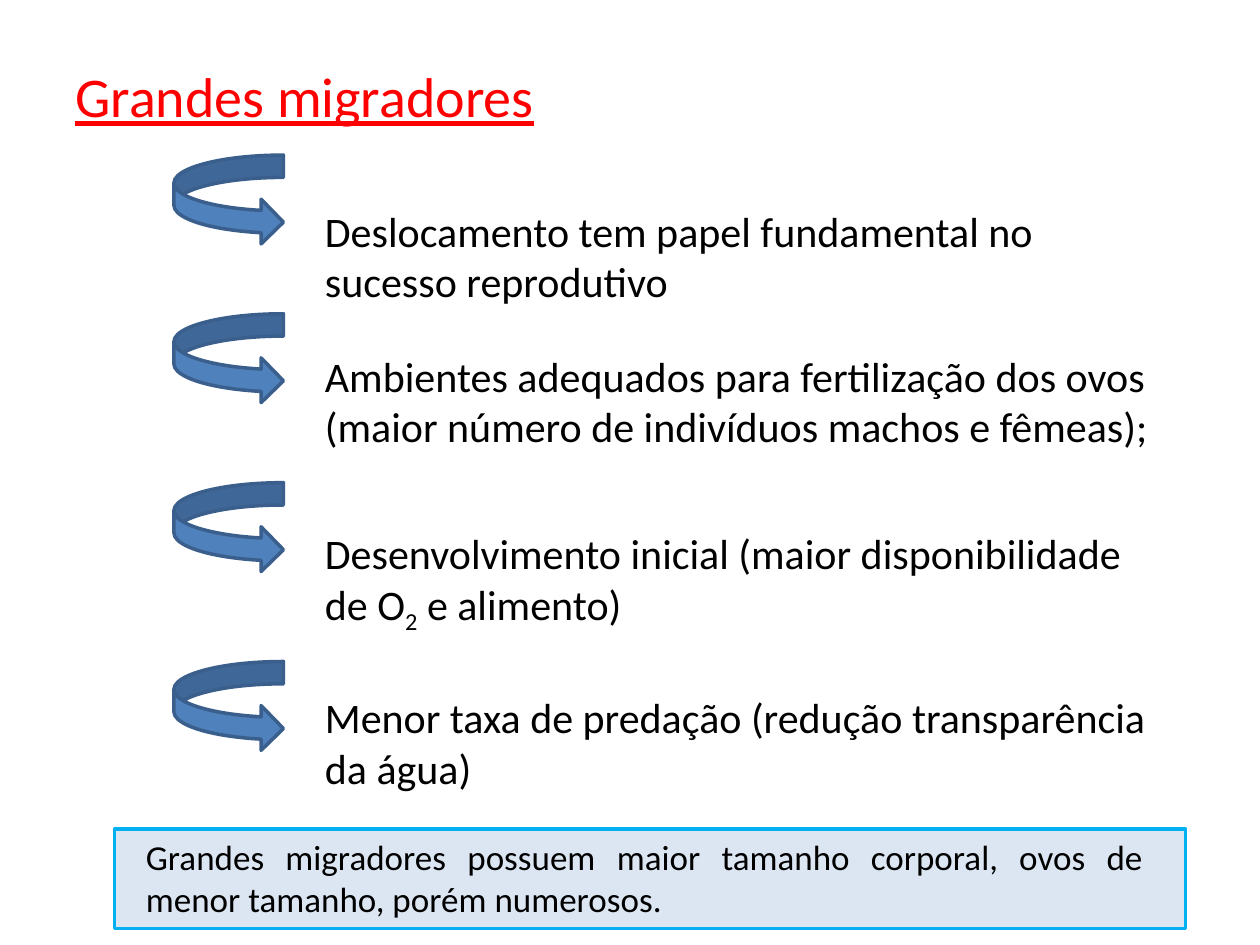
from pptx import Presentation
from pptx.dml.color import RGBColor
from pptx.enum.shapes import MSO_SHAPE
from pptx.enum.text import MSO_AUTO_SIZE, PP_ALIGN
from pptx.util import Pt

CURVED_ARROW = MSO_SHAPE.CURVED_RIGHT_ARROW
RECTANGLE = MSO_SHAPE.RECTANGLE
GROW = MSO_AUTO_SIZE.SHAPE_TO_FIT_TEXT
LEFT = PP_ALIGN.LEFT
JUSTIFY = PP_ALIGN.JUSTIFY

TOPICS = [
    (88.6, 113.8, ["Deslocamento tem papel fundamental no sucesso reprodutivo"]),
    (179.3, 196.6, ["Ambientes adequados para fertilização dos ovos "
                    "(maior número de indivíduos machos e fêmeas);"]),
    (275.8, 298.1, ["Desenvolvimento inicial (maior disponibilidade de O",
                    "2", " e alimento)"]),
    (378, 391.7, ["Menor taxa de predação (redução transparência da água)"]),
]
SUMMARY = ("Grandes migradores possuem maior tamanho corporal, "
           "ovos de menor tamanho, porém numerosos.")


def color(value):
    return RGBColor.from_string(value)


class SlideBuilder:
    font_name = "Calibri"
    line_width = 2

    def __init__(self, slide):
        self.slide = slide

    def shape(self, kind, left, top, width, height, fill, line):
        shape = self.slide.shapes.add_shape(
            kind, Pt(left), Pt(top), Pt(width), Pt(height))
        shape.shadow.inherit = False
        shape.fill.solid()
        shape.fill.fore_color.rgb = color(fill)
        shape.line.color.rgb = color(line)
        shape.line.width = Pt(self.line_width)

    def text(self, left, top, width, height, parts, size,
             ink="000000", align=LEFT, underline=None):
        box = self.slide.shapes.add_textbox(
            Pt(left), Pt(top), Pt(width), Pt(height))
        frame = box.text_frame
        frame.word_wrap = True
        frame.auto_size = GROW
        paragraph = frame.paragraphs[0]
        paragraph.alignment = align
        font = paragraph.font
        font.name = self.font_name
        font.size = Pt(size)
        font.color.rgb = color(ink)
        font.underline = underline
        for index, part in enumerate(parts):
            run = paragraph.add_run()
            run.text = part
            if index % 2:
                run._r.get_or_add_rPr().set("baseline", "-25000")


def main():
    presentation = Presentation()
    presentation.slide_width = Pt(720)
    presentation.slide_height = Pt(540)
    builder = SlideBuilder(
        presentation.slides.add_slide(presentation.slide_layouts[6]))

    builder.text(36, 31.7, 648, 62.6, ["Grandes migradores"], 32,
                 ink="FF0000", underline=True)
    for arrow_top, topic_top, parts in TOPICS:
        builder.shape(CURVED_ARROW, 99.4, arrow_top, 62.6, 51.1,
                      "4F81BD", "3A5F8C")
        builder.text(178.6, topic_top, 499, 65.5, parts, 24)
    builder.shape(RECTANGLE, 65.5, 473.8, 612, 56.9, "DCE6F2", "00B0F0")
    builder.text(76.3, 473.8, 584, 55.4, [SUMMARY], 20, align=JUSTIFY)

    presentation.save("out.pptx")


if __name__ == "__main__":
    main()
